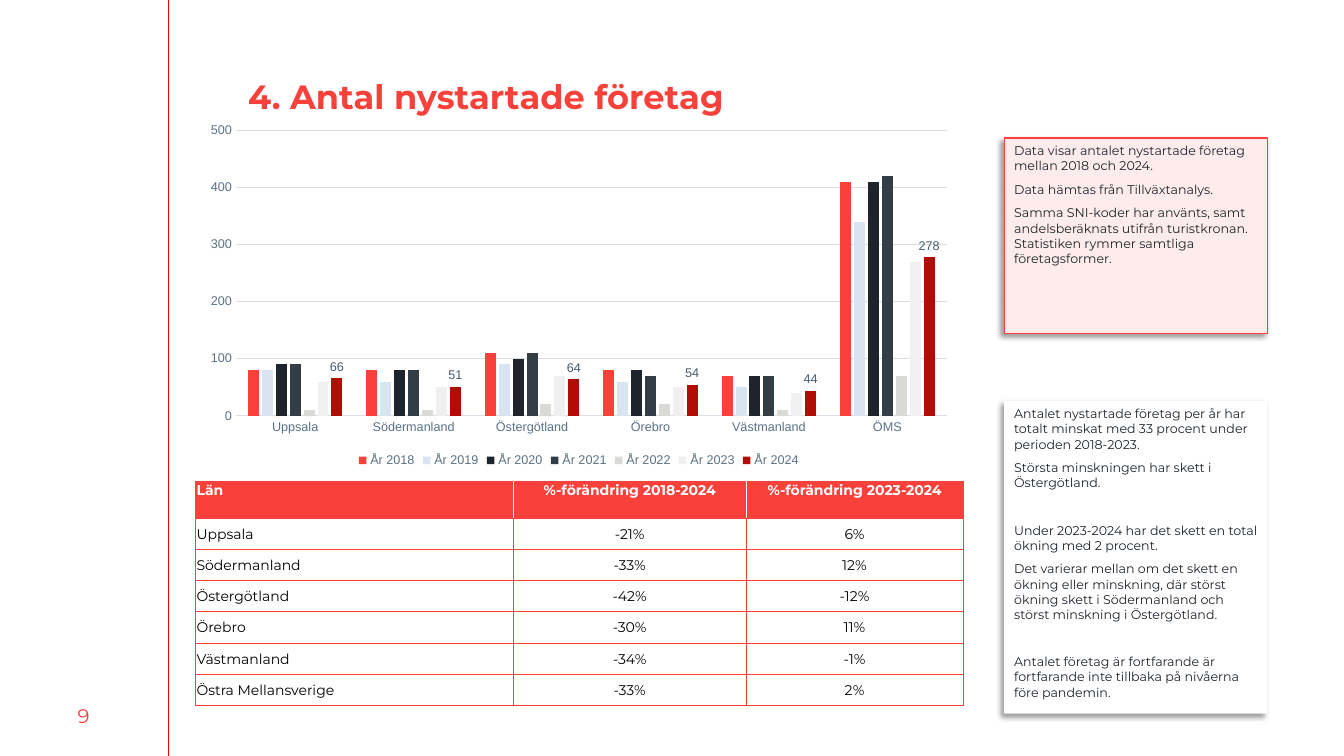
"""Build the slide on newly started companies per county."""
from dataclasses import dataclass
from typing import Optional

from lxml import etree
from pptx import Presentation
from pptx import util as u
from pptx.chart import data as chart_data
from pptx.dml.color import RGBColor
from pptx.enum import chart as chart_enum
from pptx.enum import shapes, text
from pptx.oxml import ns, parse_xml

COLORS = {
    "accent": "F8413A", "frame": "F7413A", "rule": "FF0000", "blush": "FEECEC",
    "white": "FFFFFF", "black": "000000", "ink": "1D242B", "axis": "5B7187",
    "grid": "D8DEE5", "label": "495B6C", "mist": "D8E5F0", "slate": "333D46",
    "stone": "D9D9D6", "pale": "F0F0F0", "crimson": "B10D06",
}
BODY_FONT, CHART_FONT = "Montserrat", "Arial"
COUNTIES = ["Uppsala", "Södermanland", "Östergötland", "Örebro", "Västmanland", "ÖMS"]
COLUMN_WIDTHS = [3.15, 2.31, 2.15]
TABLE_ROWS = [
    ["Län", "%-förändring 2018-2024", "%-förändring 2023-2024"],
    ["Uppsala", "-21%", "6%"],
    ["Södermanland", "-33%", "12%"],
    ["Östergötland", "-42%", "-12%"],
    ["Örebro", "-30%", "11%"],
    ["Västmanland", "-34%", "-1%"],
    ["Östra Mellansverige", "-33%", "2%"],
]


@dataclass
class YearSeries:
    """One year's bars."""
    year: int
    color: str
    values: list[int]


@dataclass
class NoteBox:
    """A shadowed box of groups of paragraphs."""
    top: float
    height: float
    fill: str
    line: Optional[str]
    groups: list[list[str]]


YEARS = [
    YearSeries(2018, "accent", [80, 80, 110, 80, 70, 410]),
    YearSeries(2019, "mist", [80, 60, 90, 60, 50, 340]),
    YearSeries(2020, "ink", [90, 80, 100, 80, 70, 410]),
    YearSeries(2021, "slate", [90, 80, 110, 70, 70, 420]),
    YearSeries(2022, "stone", [10, 10, 20, 20, 10, 70]),
    YearSeries(2023, "pale", [60, 50, 70, 50, 40, 270]),
    YearSeries(2024, "crimson", [66, 51, 64, 54, 44, 278]),
]
NOTES = [
    NoteBox(1.37, 1.94, "blush", "frame", [[
        "Data visar antalet nystartade företag mellan 2018 och 2024.",
        "Data hämtas från Tillväxtanalys.",
        "Samma SNI-koder har använts, samt andelsberäknats utifrån turistkronan. "
        "Statistiken rymmer samtliga företagsformer.",
    ]]),
    NoteBox(3.98, 3.1, "white", None, [
        ["Antalet nystartade företag per år har totalt minskat med 33 procent "
         "under perioden 2018-2023.",
         "Största minskningen har skett i Östergötland."],
        ["Under 2023-2024 har det skett en total ökning med 2 procent.",
         "Det varierar mellan om det skett en ökning eller minskning, där störst "
         "ökning skett i Södermanland och störst minskning i Östergötland."],
        ["Antalet företag är fortfarande är fortfarande inte tillbaka på nivåerna "
         "före pandemin."],
    ]),
]


def rgb(name: str) -> RGBColor:
    """Look up a named colour."""
    return RGBColor.from_string(COLORS[name])


def style_font(font, size: float, color: str, name: str = BODY_FONT, bold: bool = False) -> None:
    """Set the look of a font."""
    font.size, font.name, font.bold = u.Pt(size), name, bold
    font.color.rgb = rgb(color)


def set_margins(target, left: float, top: float, right: float, bottom: float) -> None:
    """Set the insets of a text frame or cell."""
    target.margin_left, target.margin_top = u.Inches(left), u.Inches(top)
    target.margin_right, target.margin_bottom = u.Inches(right), u.Inches(bottom)


def add_title(slide) -> None:
    """Place and format the title."""
    title = slide.shapes.title
    title.left, title.top = u.Inches(2.41), u.Inches(0.7)
    title.width, title.height = u.Inches(10.27), u.Inches(0.89)
    frame = title.text_frame
    frame.text = "4. Antal nystartade företag"
    frame.auto_size = text.MSO_AUTO_SIZE.NONE
    frame.vertical_anchor = text.MSO_ANCHOR.TOP
    set_margins(frame, 0.05, 0.05, 0.05, 0.05)
    frame.paragraphs[0].alignment = text.PP_ALIGN.LEFT
    style_font(frame.paragraphs[0].runs[0].font, 24, "accent", bold=True)


def add_margin(slide) -> None:
    """Draw the left rule and the page number."""
    rule = slide.shapes.add_connector(
        shapes.MSO_CONNECTOR.STRAIGHT, u.Inches(1.67), 0, u.Inches(1.67), u.Inches(7.5))
    rule.line.color.rgb, rule.line.width = rgb("rule"), u.Pt(0.75)
    etree.SubElement(rule._element.spPr, ns.qn("a:effectLst"))
    number = slide.shapes.add_textbox(0, u.Inches(6.9), u.Inches(1.66), u.Inches(0.4))
    frame = number.text_frame
    frame.word_wrap, frame.vertical_anchor = True, text.MSO_ANCHOR.MIDDLE
    frame.text = "9"
    frame.paragraphs[0].alignment = text.PP_ALIGN.CENTER
    style_font(frame.paragraphs[0].runs[0].font, 14, "frame")


def add_note(slide, note: NoteBox) -> None:
    """Draw a note box with its shadow and text."""
    shape = slide.shapes.add_shape(
        shapes.MSO_SHAPE.RECTANGLE, u.Inches(9.96), u.Inches(note.top),
        u.Inches(2.61), u.Inches(note.height))
    shape.fill.solid()
    shape.fill.fore_color.rgb = rgb(note.fill)
    if note.line:
        shape.line.color.rgb, shape.line.width = rgb(note.line), u.Pt(1)
    else:
        shape.line.fill.background()
    shape.shadow.inherit = False
    shape._element.spPr.find(ns.qn("a:effectLst")).append(parse_xml(
        f'<a:outerShdw {ns.nsdecls("a")} blurRad="{u.Pt(4)}" dist="{u.Pt(3)}" '
        'dir="8100000" algn="tr" rotWithShape="0"><a:srgbClr val="000000">'
        '<a:alpha val="40000"/></a:srgbClr></a:outerShdw>'))
    frame = shape.text_frame
    frame.word_wrap, frame.vertical_anchor = True, text.MSO_ANCHOR.TOP
    frame.text = "\n".join(line for group in note.groups for line in group)
    gaps = [20 if index == 0 else 3 for group in note.groups for index in range(len(group))]
    gaps[0] = 0
    for paragraph, gap in zip(frame.paragraphs, gaps):
        paragraph.alignment = text.PP_ALIGN.LEFT
        paragraph.space_before, paragraph.space_after = u.Pt(gap), u.Pt(3)
        style_font(paragraph.runs[0].font, 9, "ink")


def add_border(cell, side: str, color: str) -> None:
    """Give one side of a cell a thin line."""
    cell._tc.get_or_add_tcPr().append(parse_xml(
        f'<a:ln{side} {ns.nsdecls("a")} w="{u.Pt(0.5)}"><a:solidFill>'
        f'<a:srgbClr val="{COLORS[color]}"/></a:solidFill></a:ln{side}>'))


def add_change_table(slide) -> None:
    """Add the table of percentage changes."""
    table = slide.shapes.add_table(
        len(TABLE_ROWS), len(COLUMN_WIDTHS), u.Inches(1.94), u.Inches(4.77),
        u.Inches(7.6), u.Inches(2.23)).table
    table.horz_banding = False
    for column, width in zip(table.columns, COLUMN_WIDTHS):
        column.width = u.Inches(width)
    last = len(COLUMN_WIDTHS) - 1
    for r, values in enumerate(TABLE_ROWS):
        header = r == 0
        table.rows[r].height = u.Inches(0.37 if header else 0.31)
        for c, value in enumerate(values):
            cell = table.cell(r, c)
            cell.text = value
            set_margins(cell, 0.01, 0.01, 0.01, 0)
            cell.vertical_anchor = text.MSO_ANCHOR.TOP if header else text.MSO_ANCHOR.MIDDLE
            add_border(cell, "L", "white" if header and c > 0 else "accent")
            add_border(cell, "R", "white" if header and c < last else "accent")
            add_border(cell, "T", "accent")
            add_border(cell, "B", "accent")
            if header:
                cell.fill.solid()
                cell.fill.fore_color.rgb = rgb("accent")
            else:
                cell.fill.background()
            paragraph = cell.text_frame.paragraphs[0]
            paragraph.alignment = text.PP_ALIGN.CENTER if c else text.PP_ALIGN.LEFT
            style_font(paragraph.runs[0].font, 10, "white" if header else "black", bold=header)


def add_company_chart(slide) -> None:
    """Add the clustered columns of companies per county and year."""
    data = chart_data.CategoryChartData(number_format="0")
    data.categories = COUNTIES
    for entry in YEARS:
        data.add_series(f"År {entry.year}", entry.values)
    chart = slide.shapes.add_chart(
        chart_enum.XL_CHART_TYPE.COLUMN_CLUSTERED, u.Inches(1.94), u.Inches(1.15),
        u.Inches(7.6), u.Inches(3.53), data).chart
    style_font(chart.font, 10, "ink", CHART_FONT)
    chart.has_title, chart.has_legend = False, True
    chart.legend.position = chart_enum.XL_LEGEND_POSITION.BOTTOM
    chart.legend.include_in_layout = False
    style_font(chart.legend.font, 9, "axis", CHART_FONT)
    for axis in (chart.category_axis, chart.value_axis):
        axis.major_tick_mark = axis.minor_tick_mark = chart_enum.XL_TICK_MARK.NONE
        style_font(axis.tick_labels.font, 9, "axis", CHART_FONT)
    values = chart.value_axis
    values.minimum_scale, values.maximum_scale, values.major_unit = 0, 500, 100
    values.format.line.fill.background()
    for line in (chart.category_axis.format.line, values.major_gridlines.format.line):
        line.color.rgb, line.width = rgb("grid"), u.Pt(0.75)
    plot = chart.plots[0]
    plot.gap_width, plot.overlap, plot.vary_by_categories = 219, -27, False
    for series, entry in zip(plot.series, YEARS):
        series.invert_if_negative = False
        series.format.fill.solid()
        series.format.fill.fore_color.rgb = rgb(entry.color)
    labels = plot.series[-1].data_labels
    labels.show_value, labels.position = True, chart_enum.XL_LABEL_POSITION.OUTSIDE_END
    labels.number_format, labels.number_format_is_linked = "0", False
    style_font(labels.font, 9, "label", CHART_FONT)


def main() -> None:
    """Build and save the presentation."""
    presentation = Presentation()
    presentation.slide_width, presentation.slide_height = u.Inches(13.33), u.Inches(7.5)
    slide = presentation.slides.add_slide(presentation.slide_layouts[5])
    add_margin(slide)
    add_title(slide)
    for note in NOTES:
        add_note(slide, note)
    add_change_table(slide)
    add_company_chart(slide)
    presentation.save("out.pptx")


if __name__ == "__main__":
    main()
